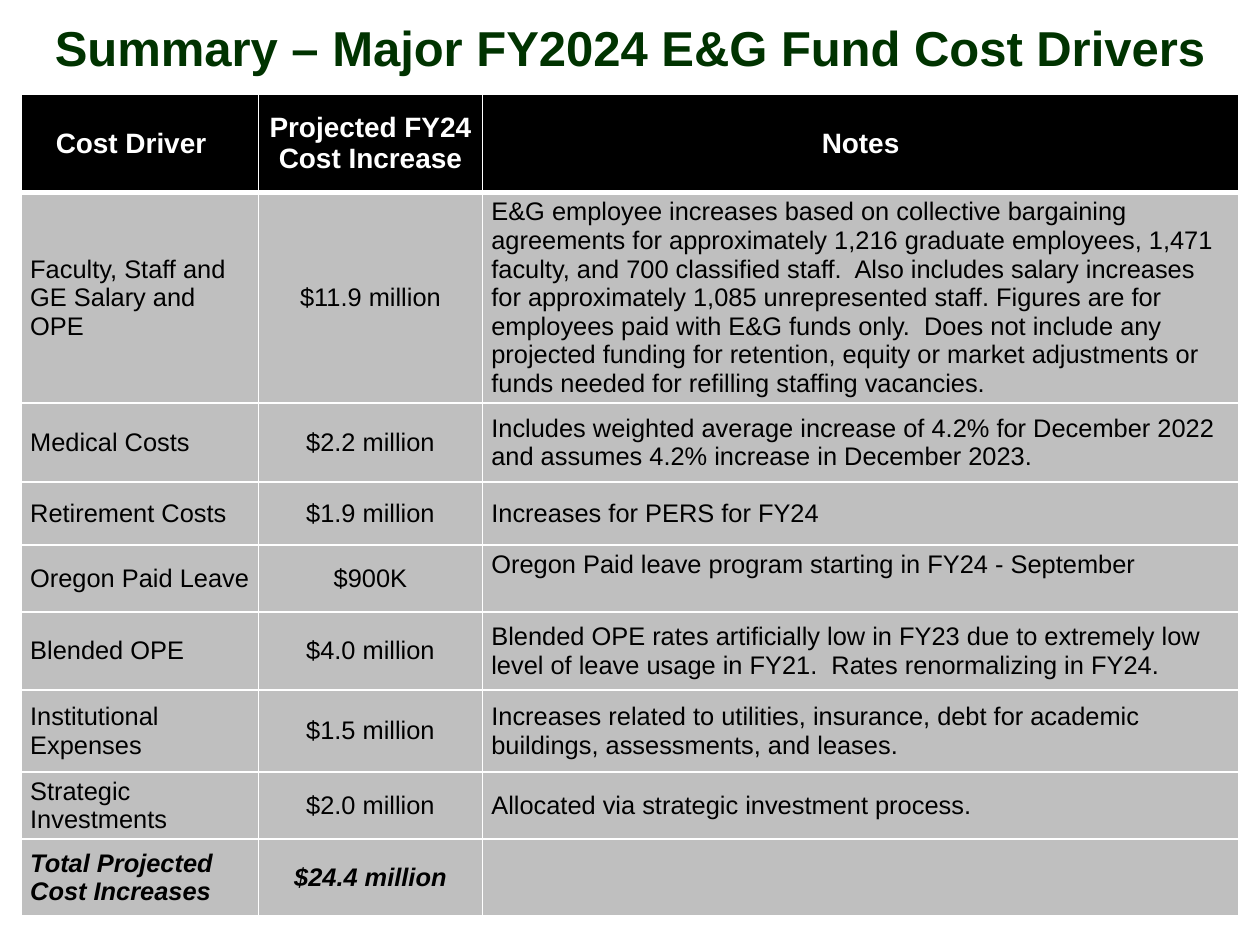
from lxml import etree
from pptx import Presentation, util as u
from pptx.dml.color import RGBColor
from pptx.enum import text
from pptx.oxml.ns import qn

TITLE = "Summary – Major FY2024 E&G Fund Cost Drivers"
HEADERS = ("Cost Driver", "Projected FY24 Cost Increase", "Notes")
DRIVERS = [
    ("Faculty, Staff and GE Salary and OPE", "$11.9 million",
     "E&G employee increases based on collective bargaining agreements for "
     "approximately 1,216 graduate employees, 1,471 faculty, and 700 classified "
     "staff.  Also includes salary increases for approximately 1,085 "
     "unrepresented staff. Figures are for employees paid with E&G funds only.  "
     "Does not include any projected funding for retention, equity or market "
     "adjustments or funds needed for refilling staffing vacancies."),
    ("Medical Costs", "$2.2 million",
     "Includes weighted average increase of 4.2% for December 2022 and assumes "
     "4.2% increase in December 2023."),
    ("Retirement Costs", "$1.9 million", "Increases for PERS for FY24"),
    ("Oregon Paid Leave", "$900K",
     "Oregon Paid leave program starting in FY24 - September"),
    ("Blended OPE", "$4.0 million",
     "Blended OPE rates artificially low in FY23 due to extremely low level of "
     "leave usage in FY21.  Rates renormalizing in FY24."),
    ("Institutional Expenses", "$1.5 million",
     "Increases related to utilities, insurance, debt for academic buildings, "
     "assessments, and leases."),
    ("Strategic Investments", "$2.0 million",
     "Allocated via strategic investment process."),
]
TOTAL = ("Total Projected Cost Increases", "$24.4 million", "")
ROWS = [HEADERS, *DRIVERS, TOTAL]

WIDTH, HEIGHT = 10, 7.5
COLUMNS = (1.88, 1.78, 6)
ROW_HEIGHTS = (0.78, 1.66, 0.63, 0.5, 0.53, 0.62, 0.65, 0.53, 0.61)
TABLE_TOP = HEIGHT / 10
MARGINS = {"margin_left": 0.07, "margin_right": 0.07,
           "margin_top": 0.04, "margin_bottom": 0.04}
EXTRA_MARGINS = {(0, 0): {"margin_right": 0.21}}
TOP_ANCHORED = {(4, 2)}

THEME = {
    "title": {"size": 28, "color": "003300", "bold": True},
    "header": {"size": 16, "color": "FFFFFF", "bold": True},
    "body": {"size": 14.5, "color": "000000", "bold": False},
    "total": {"size": 14.5, "color": "000000", "bold": True, "italic": True},
    "font": "Arial",
    "header_fill": "000000",
    "body_fill": "BFBFBF",
    "rule": "FFFFFF",
    "thin": 1,
    "thick": 3,
}


def write(frame, words, style, align):
    para = frame.paragraphs[0]
    para.alignment = align
    span = para.add_run()
    span.text = words
    span.font.color.rgb = RGBColor.from_string(style["color"])
    values = {"name": THEME["font"], "size": u.Pt(style["size"]),
              "bold": style["bold"], "italic": style.get("italic", False)}
    for name, value in values.items():
        setattr(span.font, name, value)


def add_borders(cell, row):
    properties = cell._tc.get_or_add_tcPr()
    thick_side = {0: "B", 1: "T"}.get(row)
    for side in "LRTB":
        points = THEME["thick" if side == thick_side else "thin"]
        line = etree.SubElement(properties, qn(f"a:ln{side}"), w=str(u.Pt(points)))
        fill = etree.SubElement(line, qn("a:solidFill"))
        etree.SubElement(fill, qn("a:srgbClr"), val=THEME["rule"])


def add_cost_table(page):
    left = (WIDTH - sum(COLUMNS)) / 2
    area = [u.Inches(n) for n in (left, TABLE_TOP, sum(COLUMNS), sum(ROW_HEIGHTS))]
    table = page.shapes.add_table(len(ROWS), len(COLUMNS), *area).table
    table.horz_banding = False
    for column, width in zip(table.columns, COLUMNS):
        column.width = u.Inches(width)
    for line, height in zip(table.rows, ROW_HEIGHTS):
        line.height = u.Inches(height)

    kinds = ["header", *["body"] * len(DRIVERS), "total"]
    for row, (kind, texts) in enumerate(zip(kinds, ROWS)):
        for column, words in enumerate(texts):
            cell = table.cell(row, column)
            add_borders(cell, row)
            cell.fill.solid()
            fill = THEME["header_fill" if kind == "header" else "body_fill"]
            cell.fill.fore_color.rgb = RGBColor.from_string(fill)
            margins = {**MARGINS, **EXTRA_MARGINS.get((row, column), {})}
            for name, value in margins.items():
                setattr(cell, name, u.Inches(value))
            top = (row, column) in TOP_ANCHORED
            cell.vertical_anchor = text.MSO_ANCHOR.TOP if top else text.MSO_ANCHOR.MIDDLE
            centred = kind == "header" or column == 1
            align = text.PP_ALIGN.CENTER if centred else text.PP_ALIGN.LEFT
            if words:
                write(cell.text_frame, words, THEME[kind], align)


def add_title(page):
    area = [u.Inches(n) for n in (0, -0.08, WIDTH, 0.91)]
    frame = page.shapes.add_textbox(*area).text_frame
    frame.word_wrap = True
    frame.vertical_anchor = text.MSO_ANCHOR.MIDDLE
    write(frame, TITLE, THEME["title"], text.PP_ALIGN.CENTER)


def main():
    deck = Presentation()
    deck.slide_width, deck.slide_height = u.Inches(WIDTH), u.Inches(HEIGHT)
    page = deck.slides.add_slide(deck.slide_layouts[6])
    add_cost_table(page)
    add_title(page)
    deck.save("out.pptx")


if __name__ == "__main__":
    main()
